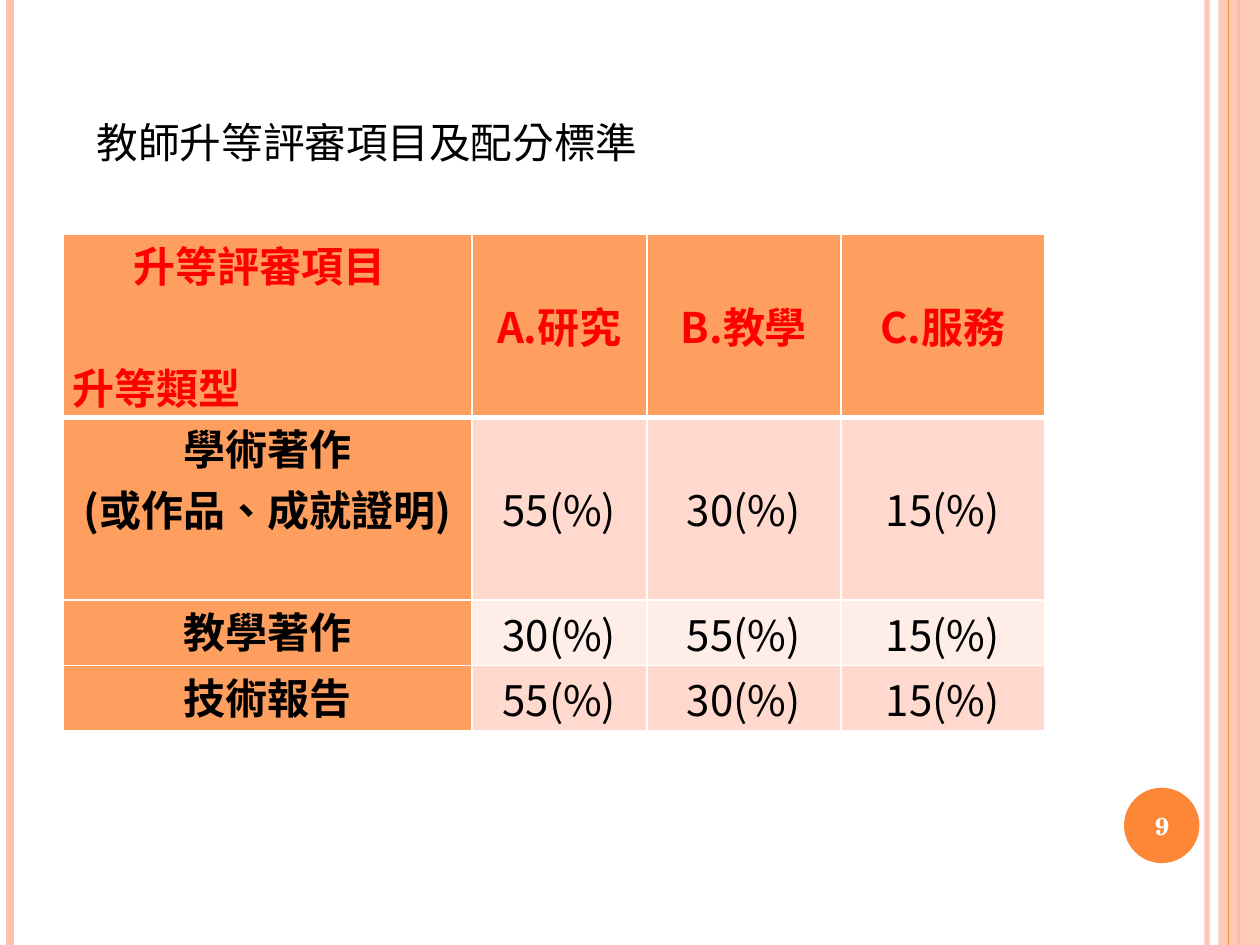
from dataclasses import dataclass
from lxml.etree import SubElement
from pptx import Presentation
from pptx.dml.color import RGBColor
from pptx.enum.shapes import MSO_CONNECTOR, MSO_SHAPE
from pptx.enum.text import MSO_ANCHOR, PP_ALIGN
from pptx.oxml.ns import qn
from pptx.util import Cm, Pt


@dataclass(frozen=True)
class Theme:
    accent: str = "FE8637"
    pale: str = "FEC3AE"
    band_dark: str = "FFD9CE"
    band_light: str = "FFEDE8"
    white: str = "FFFFFF"
    black: str = "000000"
    red: str = "FF0000"
    body_font: str = "Noto Sans CJK SC"
    number_font: str = "TeX Gyre Schola"
    title_size: float = 29.7
    table_size: float = 24
    number_size: float = 14


def set_alpha(fill_parent, percent):
    color = next(fill_parent.iter(qn("a:srgbClr")))
    SubElement(color, qn("a:alpha")).set("val", str(percent * 1000))


class SlideBuilder:
    def __init__(self, slide, theme):
        self.s = slide
        self.theme = theme

    def run(self, p, text, size, color, bold=False, font=None):
        r = p.add_run()
        r.text = text
        r.font.size = Pt(size)
        r.font.bold = bold
        r.font.color.rgb = RGBColor.from_string(color)
        r.font.name = font or self.theme.body_font
        rPr = r.font._element
        rPr.set("lang", "zh-TW")
        SubElement(rPr, qn("a:ea")).set("typeface", r.font.name)
        return r

    def vertical_line(self, x, color, width, alpha=100):
        line = self.s.shapes.add_connector(
            MSO_CONNECTOR.STRAIGHT, Cm(x), Cm(0), Cm(x), Cm(19.05))
        line.line.color.rgb = RGBColor.from_string(color)
        line.line.width = Pt(width)
        spPr = line._element.spPr
        if alpha < 100:
            set_alpha(spPr, alpha)
        SubElement(spPr, qn("a:effectLst"))

    def shape(self, kind, x, y, w, h, color, alpha=100):
        sp = self.s.shapes.add_shape(kind, Cm(x), Cm(y), Cm(w), Cm(h))
        sp.shadow.inherit = False
        sp.fill.solid()
        sp.fill.fore_color.rgb = RGBColor.from_string(color)
        sp.line.fill.background()
        if alpha < 100:
            set_alpha(sp._element.spPr, alpha)

    def text(self, x, y, w, h, text, size, color, anchor,
             align=PP_ALIGN.LEFT, bold=False, font=None):
        tf = self.s.shapes.add_textbox(Cm(x), Cm(y), Cm(w), Cm(h)).text_frame
        tf.word_wrap = True
        tf.vertical_anchor = anchor
        p = tf.paragraphs[0]
        p.alignment = align
        return self.run(p, text, size, color, bold, font)

    def table(self, x, y, widths, heights):
        table = self.s.shapes.add_table(
            len(heights), len(widths), Cm(x), Cm(y),
            Cm(sum(widths)), Cm(sum(heights))).table
        table.first_row = table.horz_banding = False
        for column, width in zip(table.columns, widths):
            column.width = Cm(width)
        for row, height in zip(table.rows, heights):
            row.height = Cm(height)
        return table

    def cell(self, cell, lines, color, fill, bold, anchor,
             align=PP_ALIGN.CENTER, alpha=100, top=1, bottom=1):
        cell.margin_left = cell.margin_right = Cm(0.18)
        cell.margin_top = cell.margin_bottom = 0
        cell.vertical_anchor = anchor
        tcPr = cell._tc.get_or_add_tcPr()
        for side, width in zip("LRTB", (1, 1, top, bottom)):
            ln = SubElement(tcPr, qn(f"a:ln{side}"), w=str(Pt(width)))
            solid = SubElement(ln, qn("a:solidFill"))
            SubElement(solid, qn("a:srgbClr"), val=self.theme.white)
        cell.fill.solid()
        cell.fill.fore_color.rgb = RGBColor.from_string(fill)
        if alpha < 100:
            set_alpha(tcPr.find(qn("a:solidFill")), alpha)
        tf = cell.text_frame
        for i, line in enumerate(lines):
            p = tf.add_paragraph() if i else tf.paragraphs[0]
            p.alignment = align
            self.run(p, line, self.theme.table_size, color, bold)
        return tf


def build_score_table(b):
    t = b.theme
    header = ["A.研究", "B.教學", "C.服務"]
    rows = [
        (["學術著作", "(或作品、成就證明)"], (55, 30, 15)),
        (["教學著作"], (30, 55, 15)),
        (["技術報告"], (55, 30, 15)),
    ]
    three_lines, one_line = 3.69, 1.32
    table = b.table(1.28, 4.72, [8.23, 3.53, 3.91, 4.11],
                    [three_lines, three_lines, one_line, one_line])

    tf = b.cell(table.cell(0, 0), ["升等評審項目", "升等類型"], t.red, t.accent,
                True, MSO_ANCHOR.TOP, PP_ALIGN.LEFT, alpha=80, bottom=3)
    item, category = tf.paragraphs
    item._p.get_or_add_pPr().set("marL", str(Cm(1.23)))
    category.space_before = Pt(34.75)
    for col, label in enumerate(header, 1):
        b.cell(table.cell(0, col), [label], t.red, t.accent, True,
               MSO_ANCHOR.MIDDLE, alpha=80, bottom=3)

    for row, (names, scores) in enumerate(rows, 1):
        top = 3 if row == 1 else 1
        band = t.band_dark if row % 2 else t.band_light
        b.cell(table.cell(row, 0), names, t.black, t.accent, True,
               MSO_ANCHOR.TOP, alpha=80, top=top)
        for col, score in enumerate(scores, 1):
            b.cell(table.cell(row, col), [f"{score}(%)"], t.black, band, False,
                   MSO_ANCHOR.MIDDLE, top=top)


def main():
    prs = Presentation()
    prs.slide_width, prs.slide_height = Cm(25.4), Cm(19.05)
    t = Theme()
    b = SlideBuilder(prs.slides.add_slide(prs.slide_layouts[6]), t)

    b.vertical_line(24.33, t.pale, 3, alpha=93)
    b.vertical_line(0.2, t.pale, 4.5)
    b.vertical_line(24.97, t.accent, 1.5)
    b.shape(MSO_SHAPE.RECTANGLE, 24.56, 0, 0.84, 19.05, t.pale, alpha=87)
    b.vertical_line(24.77, t.accent, 0.75)
    b.shape(MSO_SHAPE.OVAL, 22.66, 15.88, 1.52, 1.52, t.accent)

    title = b.text(1.7, 1.12, 20.75, 2.41, "教師升等評審項目及配分標準",
                   t.title_size, t.black, MSO_ANCHOR.BOTTOM)
    title.font._element.set("cap", "small")
    b.text(22.58, 15.93, 1.7, 1.45, "9", t.number_size, t.white,
           MSO_ANCHOR.MIDDLE, PP_ALIGN.CENTER, True, t.number_font)
    build_score_table(b)
    prs.save("out.pptx")


if __name__ == "__main__":
    main()
